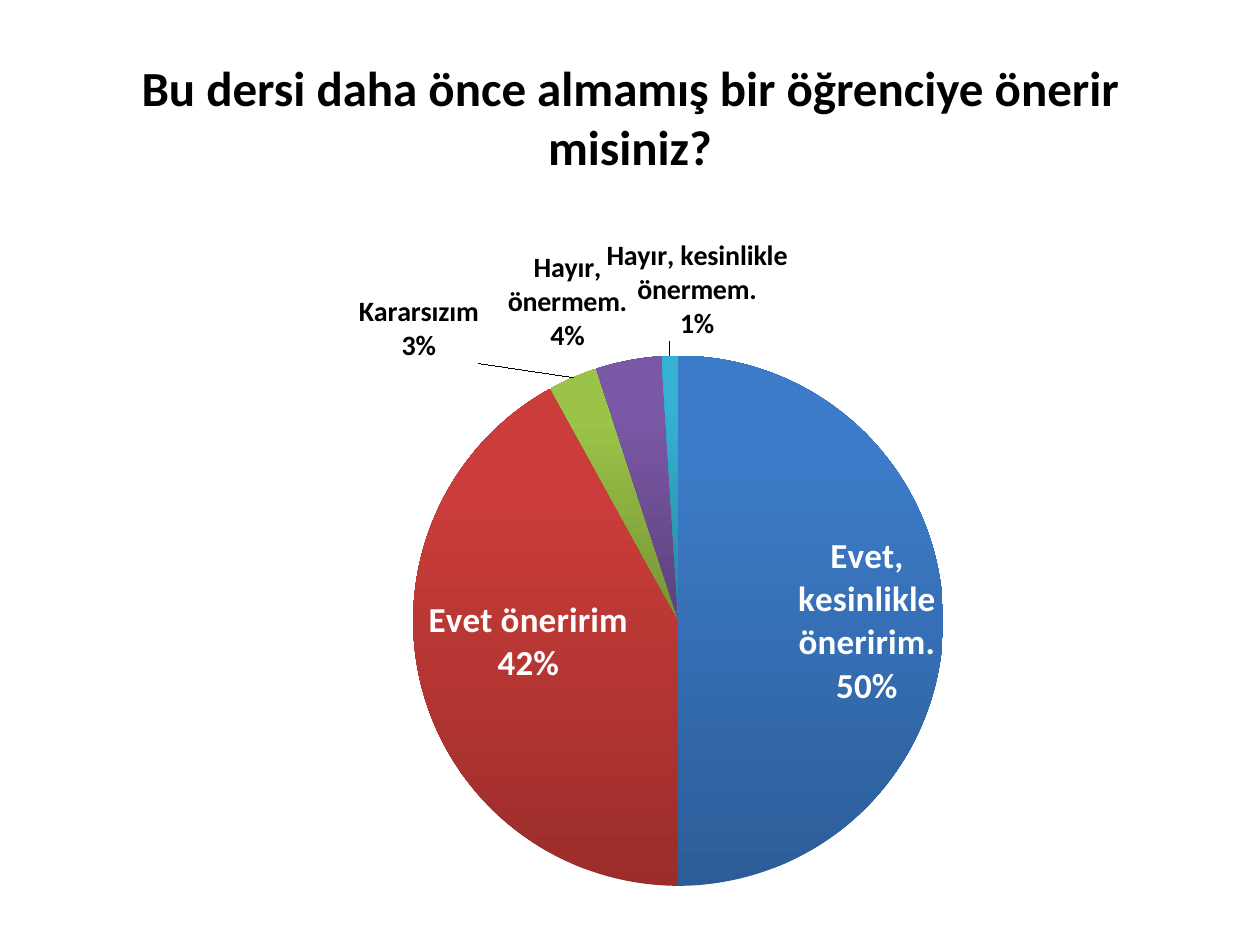
from lxml import etree
from pptx import Presentation
from pptx.chart.data import CategoryChartData
from pptx.dml.color import RGBColor
from pptx.enum.chart import XL_CHART_TYPE as ChartType, XL_LABEL_POSITION as LabelPosition
from pptx.enum.text import MSO_ANCHOR as Anchor, PP_ALIGN as Align
from pptx.oxml.ns import qn
from pptx.util import Pt

EMU_PER_PX = 914400 / 126
INSIDE, OUTSIDE = LabelPosition.INSIDE_END, LabelPosition.OUTSIDE_END

# answer, percent, dark and light fill, label position, size, colour, offset
SLICES = [
    ("Evet, kesinlikle öneririm.", 50, "2C5D98", "3C7BC7", INSIDE, 20, "FFFFFF", None),
    ("Evet öneririm", 42, "9B2D2A", "CB3D3A", INSIDE, 20, "FFFFFF", None),
    ("Kararsızım", 3, "769535", "9BC348", OUTSIDE, 16, "000000", (-0.1, -0.01)),
    ("Hayır, önermem.", 4, "5D417E", "7B58A6", OUTSIDE, 16, "000000", None),
    ("Hayır, kesinlikle önermem.", 1, "2787A0", "36B1D2", OUTSIDE, 16, "000000", (0.03, -0.01)),
]


def px(length):
    return round(length * EMU_PER_PX)


def color(hex_string):
    return RGBColor.from_string(hex_string)


def manual_layout(**settings):
    """Return a c:layout element; settings are its children in schema order."""
    layout = etree.Element(qn("c:layout"))
    manual = etree.SubElement(layout, qn("c:manualLayout"))
    for name, value in settings.items():
        etree.SubElement(manual, qn(f"c:{name}")).set("val", str(value))
    return layout


class SlideBuilder:
    font_name = "Calibri"
    text_color = "000000"

    def __init__(self, slide):
        self.slide = slide

    def style_font(self, font, size, hex_string=None, bold=True):
        font.name = self.font_name
        font.size = Pt(size)
        font.bold = bold
        font.color.rgb = color(hex_string or self.text_color)

    def title(self, text, left, top, width, height):
        shape = self.slide.shapes.title
        shape.left, shape.top, shape.width, shape.height = map(px, (left, top, width, height))
        frame = shape.text_frame
        frame.text = text
        frame.word_wrap = True
        frame.vertical_anchor = Anchor.MIDDLE
        paragraph = frame.paragraphs[0]
        paragraph.alignment = Align.CENTER
        self.style_font(paragraph.font, 28)

    def pie(self, slices, left, top, width, height, plot):
        """Add a pie; plot is its left, top, width and height as chart fractions."""
        data = CategoryChartData()
        data.categories = [entry[0] for entry in slices]
        data.add_series("Series 1", [entry[1] for entry in slices])
        chart = self.slide.shapes.add_chart(
            ChartType.PIE, *map(px, (left, top, width, height)), data).chart
        chart.has_legend = chart.has_title = False
        self.style_font(chart.font, 10, bold=False)
        chart.plots[0].vary_by_categories = True

        plot_area = chart.element.find(f".//{qn('c:plotArea')}")
        for layout in plot_area.findall(qn("c:layout")):
            plot_area.remove(layout)
        x, y, w, h = plot
        plot_area.insert(0, manual_layout(
            layoutTarget="inner", xMode="edge", yMode="edge", x=x, y=y, w=w, h=h))

        series = chart.plots[0].series[0]
        labels = series.data_labels
        labels.show_value = False
        labels.show_category_name = labels.show_percentage = True
        labels.number_format, labels.number_format_is_linked = "0%", False
        self.style_font(labels.font, 16)
        for index, (_, _, dark, light, *label_style) in enumerate(slices):
            point = series.points[index]
            self.gradient(point.format.fill, dark, light)
            self.slice_label(point.data_label, *label_style)
        for element in chart.element.iter(qn("c:dLbl")):
            self.show_category_and_percent(element, slices[element.idx_val][-1])

    def gradient(self, fill, dark, light):
        """Fade upwards from dark to light, with the top fifth plain."""
        fill.gradient()
        fill.gradient_angle = 90
        for stop, hex_string, position in zip(fill.gradient_stops, (dark, light), (0, 0.8)):
            stop.color.rgb = color(hex_string)
            stop.position = position

    def slice_label(self, label, position, size, hex_string, _):
        self.style_font(label.font, size, hex_string)
        label.position = position

    def show_category_and_percent(self, element, offset):
        for name, value in (("showVal", "0"), ("showCatName", "1"), ("showPercent", "1")):
            element.find(qn(f"c:{name}")).set("val", value)
        etree.SubElement(element, qn("c:separator")).text = "\n"
        if offset:
            element.insert(1, manual_layout(x=offset[0], y=offset[1]))


def main():
    presentation = Presentation()
    presentation.slide_width, presentation.slide_height = px(1260), px(945)
    builder = SlideBuilder(presentation.slides.add_slide(presentation.slide_layouts[5]))
    builder.title("Bu dersi daha önce almamış bir öğrenciye önerir misiniz?",
                  63, 38, 1134, 157)
    builder.pie(SLICES, 203, 195, 914, 728, plot=(0.23, 0.22, 0.58, 0.73))
    presentation.save("out.pptx")


if __name__ == "__main__":
    main()
